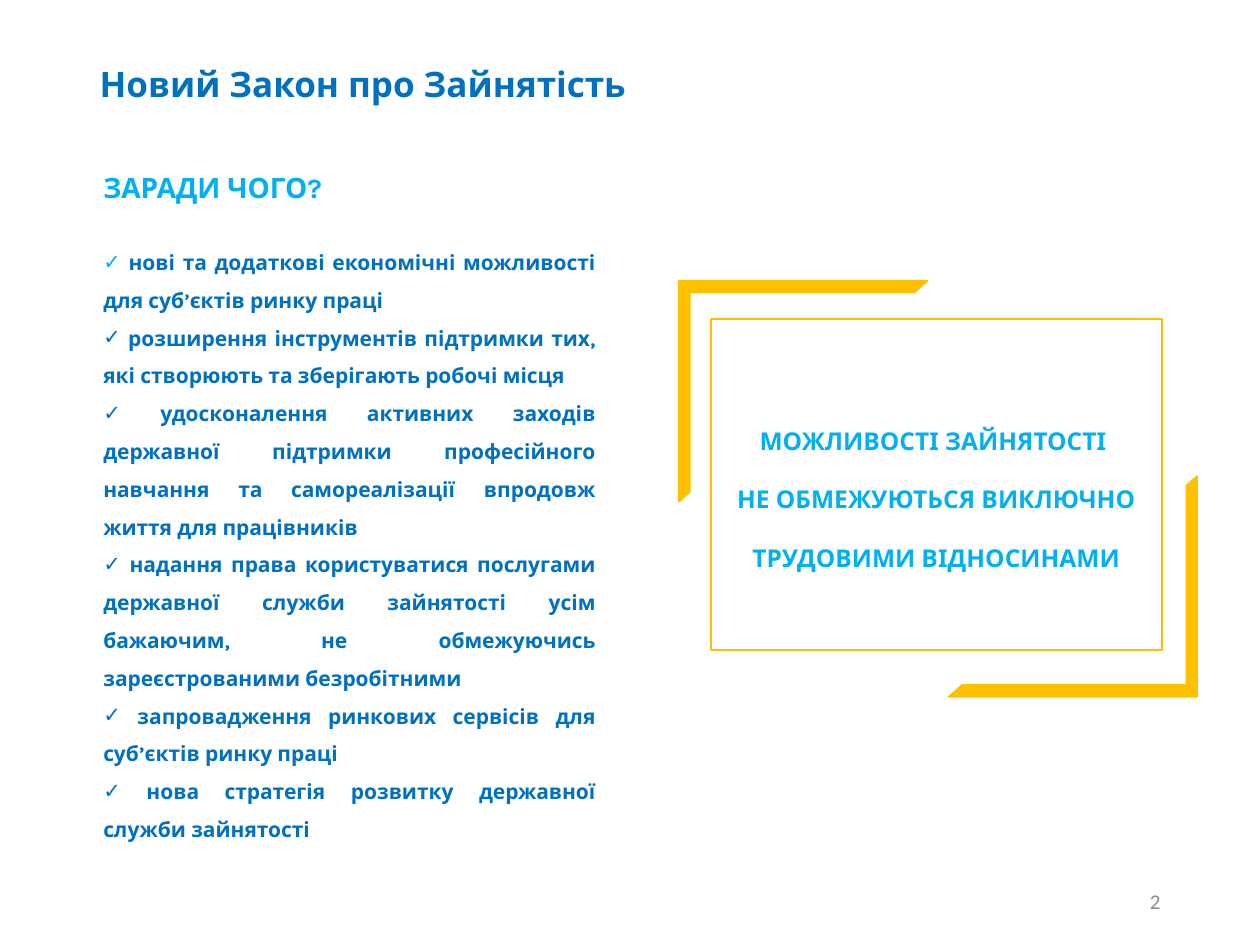
import pptx
import pptx.util
import pptx.dml.color
import pptx.enum.shapes
import pptx.enum.text
import pptx.oxml
import pptx.oxml.ns
from dataclasses import dataclass

Inches = pptx.util.Inches
Pt = pptx.util.Pt
Align = pptx.enum.text.PP_ALIGN
Shape = pptx.enum.shapes.MSO_SHAPE


@dataclass(frozen=True)
class Theme:
    font: str = "Karla"
    plain: str = "Calibri"
    blue: str = "0070C0"
    sky: str = "00B0F0"
    gold: str = "FFC000"
    white: str = "FFFFFF"
    gray: str = "8C8C8C"
    title: int = 20
    head: int = 16
    quote: int = 14
    small: int = 12


class Deck:
    def __init__(self, theme):
        self.theme = theme
        self.file = pptx.Presentation()
        self.file.slide_width, self.file.slide_height = Inches(10), Inches(7.5)
        self.slide = self.file.slides.add_slide(self.file.slide_layouts[1])

    def color(self, code):
        return pptx.dml.color.RGBColor.from_string(code)

    def place(self, shape, box):
        shape.left, shape.top, shape.width, shape.height = map(Inches, box)

    def paint(self, shape, fill, line):
        shape.fill.solid()
        shape.fill.fore_color.rgb = self.color(fill)
        shape.line.color.rgb = self.color(line)
        shape.line.width = Pt(1)

    def frame(self, shape):
        frame = shape.text_frame
        frame.word_wrap = True
        frame.auto_size = pptx.enum.text.MSO_AUTO_SIZE.NONE
        frame.vertical_anchor = pptx.enum.text.MSO_ANCHOR.MIDDLE
        return frame

    def style(self, par, size, code, align=Align.LEFT, pitch=1.0, bold=True, font=None):
        par.alignment, par.line_spacing = align, pitch
        par.space_before = Pt(0)
        par.font.name = font or self.theme.font
        par.font.size, par.font.bold = Pt(size), bold
        par.font.color.rgb = self.color(code)

    def bullet(self, par, code=None):
        """Set a check mark, or no mark when no colour is given."""
        props = par._p.get_or_add_pPr()
        props.set("marL", "0")
        props.set("indent", "0")
        if code is None:
            pptx.oxml.ns.qn("a:buNone")
            props.append(pptx.oxml.parse_xml(
                f'<a:buNone {pptx.oxml.ns.nsdecls("a")}/>'))
            return
        tint = pptx.oxml.parse_xml(
            f'<a:buClr {pptx.oxml.ns.nsdecls("a")}><a:srgbClr val="{code}"/></a:buClr>')
        mark = pptx.oxml.parse_xml(
            f'<a:buChar {pptx.oxml.ns.nsdecls("a")} char="✓"/>')
        props.extend([tint, mark])

    def title(self, text, box):
        shape = self.slide.shapes.title
        self.place(shape, box)
        par = self.frame(shape).paragraphs[0]
        par.text = text
        self.style(par, self.theme.title, self.theme.blue, pitch=0.9)

    def list(self, head, items, box):
        theme = self.theme
        shape = self.slide.placeholders[1]
        self.place(shape, box)
        self.paint(shape, theme.white, theme.white)
        frame = self.frame(shape)
        par = frame.paragraphs[0]
        par.text = head
        self.bullet(par)
        self.style(par, theme.head, theme.sky)
        par.space_after = Pt(19)
        for rank, item in enumerate(items):
            par = frame.add_paragraph()
            par.text = " " + item
            self.bullet(par, theme.blue if rank else theme.sky)
            self.style(par, theme.small, theme.blue, Align.JUSTIFY, 1.5)

    def panel(self, lines, box):
        theme = self.theme
        shape = self.slide.shapes.add_shape(Shape.RECTANGLE, *map(Inches, box))
        shape.shadow.inherit = False
        self.paint(shape, theme.white, theme.gold)
        frame = self.frame(shape)
        for rank, line in enumerate(lines):
            par = frame.add_paragraph() if rank else frame.paragraphs[0]
            par.text = line
            self.style(par, theme.quote, theme.sky, Align.CENTER, 2.0)

    def corner(self, box, turn):
        shape = self.slide.shapes.add_shape(Shape.HALF_FRAME, *map(Inches, box))
        shape.shadow.inherit = False
        shape.adjustments[0], shape.adjustments[1] = 0.053, 0.048
        shape.rotation = turn
        self.paint(shape, self.theme.gold, self.theme.gold)

    def number(self, text, box):
        shape = self.slide.shapes.add_textbox(*map(Inches, box))
        par = self.frame(shape).paragraphs[0]
        par.text = text
        self.style(par, self.theme.small, self.theme.gray, Align.RIGHT,
                   bold=False, font=self.theme.plain)


def main():
    deck = Deck(Theme())

    # Title and page number
    deck.title("Новий Закон про Зайнятість", (0.69, 0.4, 8.54, 0.56))
    deck.number("2", (7.06, 6.95, 2.25, 0.4))

    # Goals of the law
    deck.list("ЗАРАДИ ЧОГО?", [
        "нові та додаткові економічні можливості для суб’єктів ринку праці",
        "розширення інструментів підтримки тих, які створюють та зберігають робочі місця",
        "удосконалення активних заходів державної підтримки професійного навчання "
        "та самореалізації впродовж життя для працівників",
        "надання права користуватися послугами державної служби зайнятості усім "
        "бажаючим, не обмежуючись зареєстрованими безробітними",
        "запровадження ринкових сервісів для суб’єктів ринку праці",
        "нова стратегія розвитку державної служби зайнятості",
    ], (0.72, 1.12, 4.11, 5.79))

    # Framed message
    deck.panel(["МОЖЛИВОСТІ ЗАЙНЯТОСТІ ",
                "НЕ ОБМЕЖУЮТЬСЯ ВИКЛЮЧНО ТРУДОВИМИ ВІДНОСИНАМИ"],
               (5.64, 2.53, 3.58, 2.63))
    for left, top, turn in ((5.39, 2.23, 0), (7.53, 3.78, 180)):
        deck.corner((left, top, 1.97, 1.75), turn)

    deck.file.save("out.pptx")


if __name__ == "__main__":
    main()
